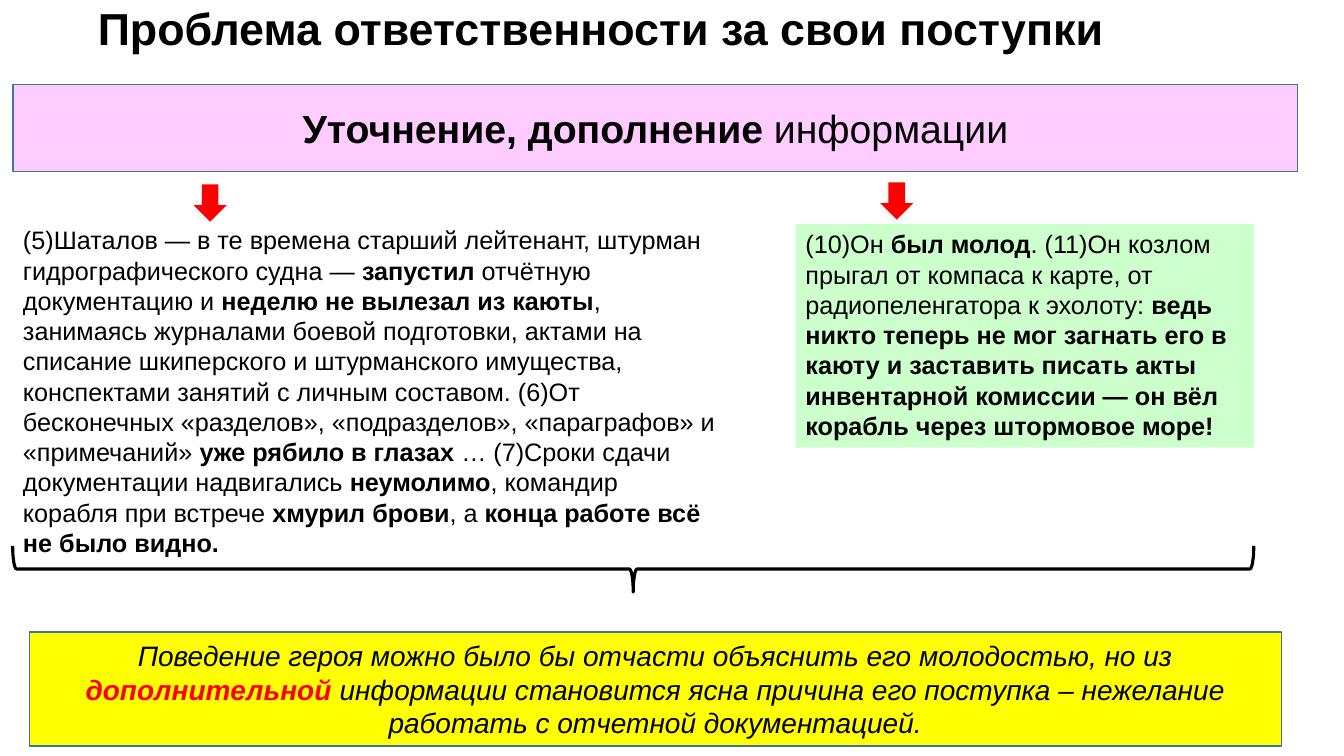
import pptx
import pptx.util
import pptx.dml.color
import pptx.enum.shapes
import pptx.enum.text

PX = 9144  # 100 px to the inch
FONT = "Arial"
COLORS = {
    "black": "000000",
    "red": "FF0000",
    "pink": "FFCCFF",
    "green": "CCFFCC",
    "yellow": "FFFF00",
    "border": "43739E",
}
SHAPES = pptx.enum.shapes.MSO_SHAPE
ALIGN = pptx.enum.text.PP_ALIGN
ANCHOR = pptx.enum.text.MSO_ANCHOR

TITLE = "Проблема ответственности за свои поступки"
HEADING = "**Уточнение, дополнение **информации"
DUTIES = (
    "(5)Шаталов — в те времена старший лейтенант, штурман гидрографического судна — "
    "**запустил** отчётную документацию и **неделю не вылезал из каюты**, занимаясь "
    "журналами боевой подготовки, актами на списание шкиперского и штурманского "
    "имущества, конспектами занятий с личным составом. (6)От бесконечных «разделов», "
    "«подразделов», «параграфов» и «примечаний» **уже рябило в глазах **… (7)Сроки сдачи "
    "документации надвигались **неумолимо**, командир корабля при встрече "
    "**хмурил брови**, а **конца работе всё не было видно.**"
)
YOUTH = (
    "(10)Он **был молод**. (11)Он козлом прыгал от компаса к карте, от радиопеленгатора "
    "к эхолоту: **ведь никто теперь не мог загнать его в каюту и заставить писать акты "
    "инвентарной комиссии — он вёл корабль через штормовое море!**"
)
CONCLUSION = (
    "Поведение героя можно было бы отчасти объяснить его молодостью, но из "
    "**дополнительной **информации становится ясна причина его поступка – нежелание "
    "работать с отчетной документацией."
)


def rgb(name):
    return pptx.dml.color.RGBColor.from_string(COLORS[name])


def emu(box):
    return [length * PX for length in box]


def write(frame, marked, size, align=ALIGN.LEFT, anchor=ANCHOR.TOP, italic=False, accent="black"):
    """Fill the frame with one paragraph; text between ** marks is bold in the accent colour."""
    frame.word_wrap = True
    frame.vertical_anchor = anchor
    paragraph = frame.paragraphs[0]
    paragraph.alignment = align
    paragraph.font.name = FONT
    paragraph.font.size = pptx.util.Pt(size)
    paragraph.font.italic = italic
    for index, part in enumerate(marked.split("**")):
        if part:
            bold = index % 2 == 1
            run = paragraph.add_run()
            run.text = part
            run.font.bold = bold
            run.font.color.rgb = rgb(accent if bold else "black")
    return paragraph


def add_figure(slide, kind, box, fill=None, line=None, weight=1):
    figure = slide.shapes.add_shape(kind, *emu(box))
    figure.shadow.inherit = False
    if fill:
        figure.fill.solid()
        figure.fill.fore_color.rgb = rgb(fill)
    else:
        figure.fill.background()
    if line:
        figure.line.color.rgb = rgb(line)
        figure.line.width = pptx.util.Pt(weight)
    else:
        figure.line.fill.background()
    return figure


def place_title(slide, box):
    title = slide.shapes.title
    title.left, title.top, title.width, title.height = emu(box)
    paragraph = write(title.text_frame, f"**{TITLE}**", 32, anchor=ANCHOR.MIDDLE)
    paragraph.line_spacing = 0.9


def add_banner(slide, box, marked, size, fill, **style):
    banner = add_figure(slide, SHAPES.RECTANGLE, box, fill, "border")
    write(banner.text_frame, marked, size, ALIGN.CENTER, ANCHOR.MIDDLE, **style)


def add_quote(slide, box, marked, arrow_offset, fill=None):
    """Quotation with a red arrow above it, arrow_offset being from the box's top left."""
    left, top, width, height = box
    across, down = arrow_offset
    add_figure(slide, SHAPES.DOWN_ARROW, (left + across, top + down, 33, 37), "red")
    if fill:
        quote = add_figure(slide, SHAPES.RECTANGLE, box, fill)
    else:
        quote = slide.shapes.add_textbox(*emu(box))
    write(quote.text_frame, marked, 18)
    quote.text_frame.auto_size = pptx.enum.text.MSO_AUTO_SIZE.SHAPE_TO_FIT_TEXT


def add_brace(slide, box):
    """Brace pointing down, filling the box: a right brace turned by 90 degrees."""
    left, top, width, height = box
    upright = (left + (width - height) // 2, top + (height - width) // 2, height, width)
    brace = add_figure(slide, SHAPES.RIGHT_BRACE, upright, line="black", weight=2.25)
    brace.rotation = 90


def build_slide(presentation):
    slide = presentation.slides.add_slide(presentation.slide_layouts.get_by_name("Title Only"))
    place_title(slide, (87, 4, 1188, 54))
    add_banner(slide, (13, 84, 1274, 86), HEADING, 28, "pink")
    add_quote(slide, (13, 218, 710, 343), DUTIES, (179, -35))
    add_quote(slide, (789, 222, 455, 222), YOUTH, (84, -41), "green")
    add_brace(slide, (13, 542, 1231, 46))
    add_banner(slide, (29, 627, 1242, 113), CONCLUSION, 20, "yellow", italic=True, accent="red")


def main():
    presentation = pptx.Presentation()
    presentation.slide_width, presentation.slide_height = emu((1333, 750))
    build_slide(presentation)
    presentation.save("out.pptx")


if __name__ == "__main__":
    main()
